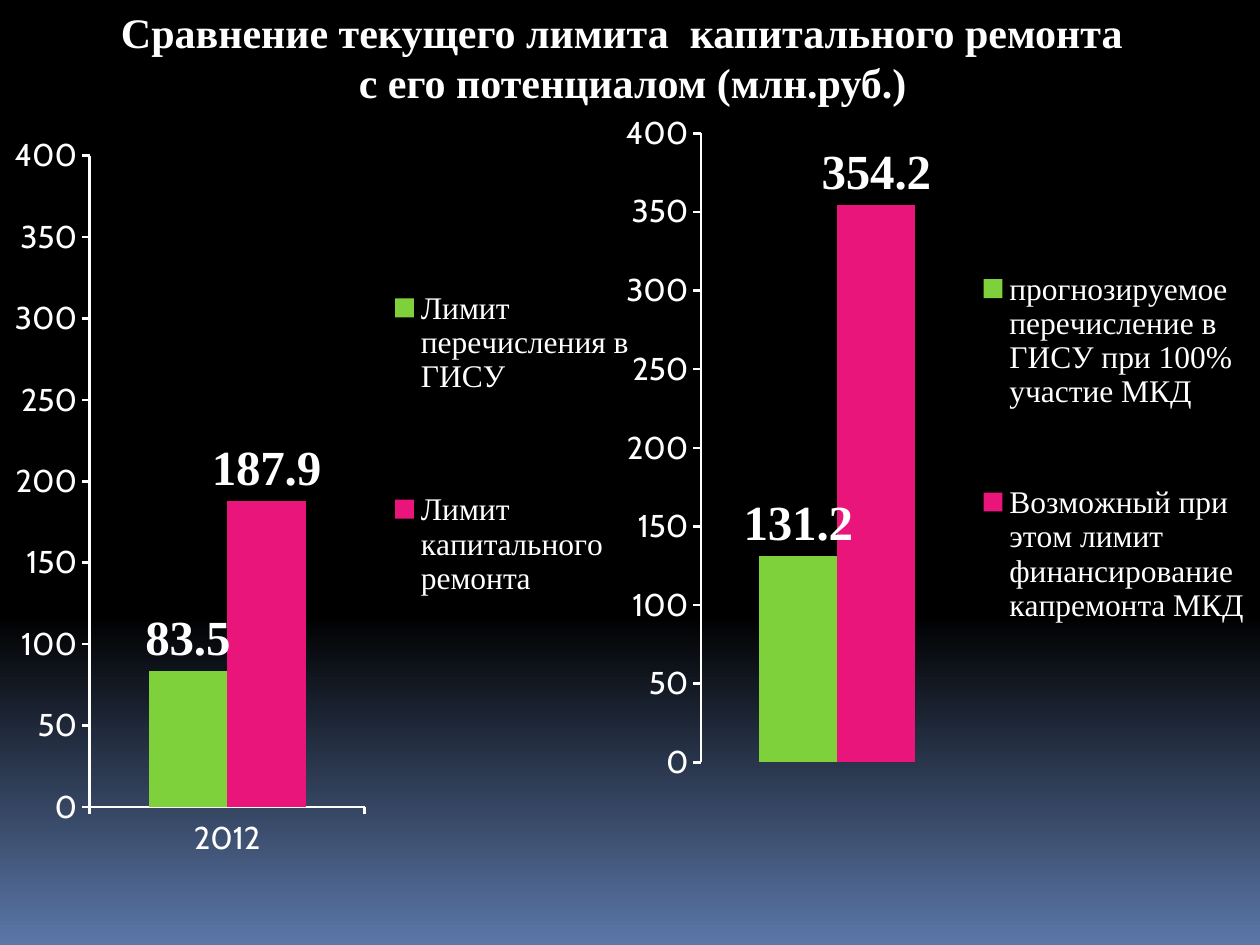
from dataclasses import dataclass

from lxml import etree
from pptx import Presentation
from pptx.chart.data import CategoryChartData
from pptx.dml.color import RGBColor
from pptx.enum.chart import (XL_CHART_TYPE, XL_LABEL_POSITION,
                             XL_LEGEND_POSITION, XL_TICK_MARK)
from pptx.enum.text import MSO_ANCHOR, PP_ALIGN
from pptx.oxml.ns import qn
from pptx.util import Inches, Pt

COLUMN = XL_CHART_TYPE.COLUMN_CLUSTERED
ABOVE = XL_LABEL_POSITION.OUTSIDE_END
RIGHT = XL_LEGEND_POSITION.RIGHT
NONE, OUTSIDE = XL_TICK_MARK.NONE, XL_TICK_MARK.OUTSIDE
LEFT, CENTER = PP_ALIGN.LEFT, PP_ALIGN.CENTER

BLACK = RGBColor(0, 0, 0)
WHITE = RGBColor(0xFF, 0xFF, 0xFF)
BLUE = RGBColor(0x5B, 0x77, 0xA8)
GREEN = RGBColor(0x7F, 0xD1, 0x3B)
PINK = RGBColor(0xEA, 0x15, 0x7A)

SERIF = "Times New Roman"
AXIS_FONT = {"name": "Cabin", "size": Pt(18), "bold": False}
KEY_FONT = {"name": SERIF, "size": Pt(18), "bold": False}
LABEL_FONT = {"name": SERIF, "size": Pt(28), "bold": True}
TITLE_FONT = {"name": SERIF, "size": Pt(24), "bold": True}

Box = tuple[float, float, float, float]


@dataclass
class Graph:
    box: Box     # inches
    plot: Box    # shares of the chart's size
    key: Box     # shares of the chart's size
    year: str
    bars: dict[str, float]
    base: bool   # whether the category axis shows


GRAPHS = [
    Graph((0, 0.94, 5.08, 5.94), (0.14, 0.05, 0.43, 0.87),
          (0.6, 0.1, 0.4, 0.67), "2012",
          {"Лимит перечисления в ГИСУ": 83.5,
           "Лимит капитального ремонта": 187.9}, True),
    Graph((4.84, 0.78, 5.16, 5.55), (0.14, 0.05, 0.42, 0.9),
          (0.58, 0.14, 0.42, 0.72), "1",
          {"прогнозируемое перечисление в ГИСУ при 100% участие МКД": 131.2,
           "Возможный при этом лимит финансирование капремонта МКД": 354.2},
          False),
]


def style(font, look: dict) -> None:
    for name, value in look.items():
        setattr(font, name, value)
    font.color.rgb = WHITE


def place(node, box: Box, inner: bool = False) -> None:
    """Give a plot area or legend a manual layout."""
    for old in node.findall(qn("c:layout")):
        node.remove(old)
    layout = etree.Element(qn("c:layout"))
    manual = etree.SubElement(layout, qn("c:manualLayout"))
    parts = [("layoutTarget", "inner")] if inner else []
    parts += [("xMode", "edge"), ("yMode", "edge"), *zip("xywh", box)]
    for tag, value in parts:
        etree.SubElement(manual, qn(f"c:{tag}")).set("val", str(value))
    node.insert(0 if inner else 1, layout)


def draw_axis(axis) -> None:
    axis.has_major_gridlines = False
    axis.major_tick_mark, axis.minor_tick_mark = OUTSIDE, NONE
    axis.format.line.color.rgb = WHITE
    axis.format.line.width = Pt(1.5)
    style(axis.tick_labels.font, AXIS_FONT)


def draw_graph(slide, graph: Graph) -> None:
    data = CategoryChartData()
    data.categories = [graph.year]
    for name, value in graph.bars.items():
        data.add_series(name, [value])
    frame = slide.shapes.add_chart(COLUMN, *map(Inches, graph.box), data)
    chart = frame.chart
    chart.has_title = False
    style(chart.font, AXIS_FONT)

    draw_axis(chart.category_axis)
    chart.category_axis.visible = graph.base
    scale = chart.value_axis
    draw_axis(scale)
    scale.minimum_scale, scale.maximum_scale, scale.major_unit = 0, 400, 50

    plot = chart.plots[0]
    plot.gap_width, plot.overlap = 150, 0
    plot.vary_by_categories = False
    for bar, color in zip(plot.series, (GREEN, PINK)):
        bar.format.fill.solid()
        bar.format.fill.fore_color.rgb = color
        labels = bar.data_labels
        labels.show_value = True
        labels.position = ABOVE
        style(labels.font, LABEL_FONT)

    chart.has_legend = True
    key = chart.legend
    key.position = RIGHT
    key.include_in_layout = False
    style(key.font, KEY_FONT)
    area = chart.element.find(f".//{qn('c:plotArea')}")
    place(area, graph.plot, inner=True)
    place(chart.element.find(f".//{qn('c:legend')}"), graph.key)


def draw_title(slide) -> None:
    title = slide.shapes.title
    title.left, title.top, title.width, title.height = map(
        Inches, (0.86, 0, 8.24, 0.91))
    text = title.text_frame
    text.word_wrap = False
    text.vertical_anchor = MSO_ANCHOR.TOP
    text.text = ("Сравнение текущего лимита  капитального ремонта\n"
                 " с его потенциалом (млн.руб.)")
    for line, align in zip(text.paragraphs, (LEFT, CENTER)):
        line.alignment = align
        style(line.runs[0].font, TITLE_FONT)


def paint_back(slide) -> None:
    fill = slide.background.fill
    fill.gradient()
    fill.gradient_angle = 270
    for stop, spot, color in zip(fill.gradient_stops, (0.65, 1), (BLACK, BLUE)):
        stop.position = spot
        stop.color.rgb = color


def main() -> None:
    deck = Presentation()
    deck.slide_width, deck.slide_height = Inches(10), Inches(7.5)
    slide = deck.slides.add_slide(deck.slide_layouts[5])
    paint_back(slide)
    for graph in GRAPHS:
        draw_graph(slide, graph)
    draw_title(slide)
    deck.save("out.pptx")


if __name__ == "__main__":
    main()
